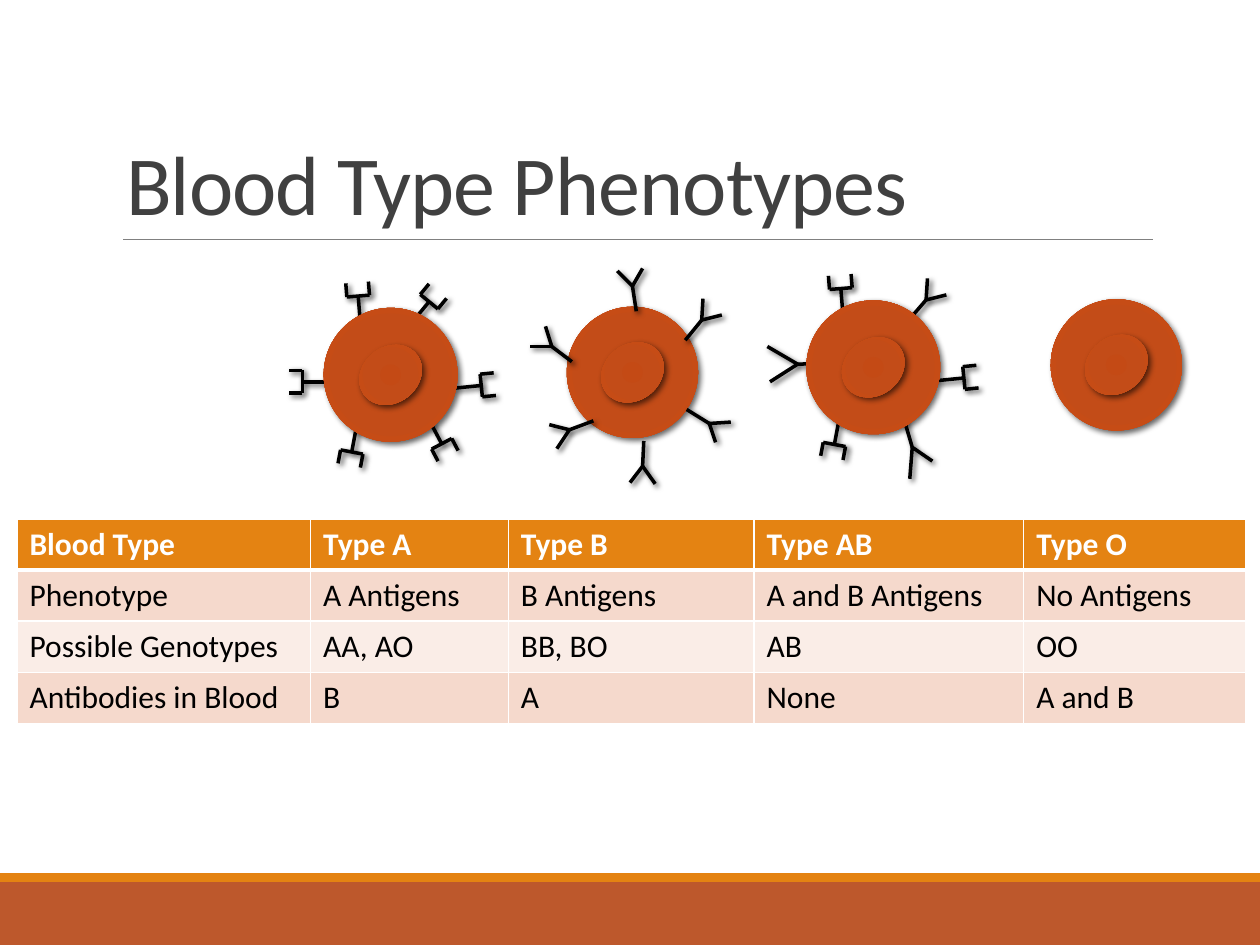
from dataclasses import dataclass
from math import hypot

from lxml.etree import SubElement
from pptx import Presentation
from pptx.dml.color import RGBColor
from pptx.enum.shapes import MSO_CONNECTOR, MSO_SHAPE
from pptx.enum.text import MSO_ANCHOR, PP_ALIGN
from pptx.oxml import parse_xml
from pptx.oxml.ns import nsdecls, qn
from pptx.util import Pt


@dataclass(frozen=True)
class Theme:
    font: str = "Calibri"
    title_size: float = 48
    table_size: float = 18
    title: str = "404040"
    rule: str = "808080"
    band: str = "BD582C"
    accent: str = "E48312"
    ink: str = "000000"
    paper: str = "FFFFFF"
    odd_row: str = "F5D9CC"
    even_row: str = "FAEDE7"
    cell_stops: tuple = ((0, "C44A15"), (34, "C34C18"), (70, "C94C15"), (100, "C45525"))


# All antigen points are offsets from the centre of the blood cell.
# An A antigen is (root, joint); its fork follows from the stem.
SHARED_A = [
    ((36.7, 7.6), (51.8, 6.1)),
    ((-19.4, 29.2), (-22.2, 44.1)),
    ((-17.3, -30), (-18.5, -45)),
]
OTHER_A = [
    ((-35.3, 4), (-50.4, 4)),
    ((22.3, 26.3), (29.2, 39.4)),
    ((12.2, -29.9), (22, -41.8)),
]
# A B antigen is (root, joint, first tip, second tip).
B_ANTIGENS = [
    ((2.2, -34.9), (0, -49.3), (-8.6, -58), (5.8, -59.4)),
    ((30.2, -18.4), (39.6, -29.9), (40.3, -42.1), (51.1, -32.8)),
    ((31, 21.2), (43.9, 29.2), (56.2, 28.4), (47.5, 40)),
    ((-34.6, -6.1), (-46.1, -14.8), (-58.3, -14.8), (-49.7, -26.3)),
    ((-22.3, 27.7), (-36, 32.8), (-43.2, 43.6), (-47.5, 29.9)),
    ((6.5, 39.2), (5.8, 53.6), (13, 63.7), (-1.4, 63)),
]
AB_B_ANTIGENS = [
    ((-18, -2.5), (-43.2, -1.8), (-59, 8.3), (-60.5, -11.9)),
    ((16.6, 26.3), (22.3, 45.7), (33.8, 53.6), (20.9, 63.7)),
    ((20.9, -27.7), (30.2, -38.5), (31, -50.8), (41.8, -41.4)),
]
# centre, diameter, antigens, antigens in front of the cell
BLOOD_CELLS = [
    ((361.4, 212.8), 75, B_ANTIGENS, True),
    ((223.2, 214.2), 76.5, SHARED_A + OTHER_A, False),
    ((499, 209.9), 76.5, SHARED_A + AB_B_ANTIGENS, False),
    ((637.9, 208.5), 75, [], False),
]
BLOOD_TYPES = [
    ["Blood Type", "Type A", "Type B", "Type AB", "Type O"],
    ["Phenotype", "A Antigens", "B Antigens", "A and B Antigens", "No Antigens"],
    ["Possible Genotypes", "AA, AO", "BB, BO", "AB", "OO"],
    ["Antibodies in Blood", "B", "A", "None", "A and B"],
]
COLUMN_WIDTHS = [167.8, 113, 140.4, 154.1, 126.7]


def antigen_lines(root, joint, *tips):
    """Return the strokes of a Y, or of a square fork if no tips are given."""
    if tips:
        return [(root, joint)] + [(joint, tip) for tip in tips]
    (x, y) = joint
    length = hypot(x - root[0], y - root[1])
    across, down = (x - root[0]) / length, (y - root[1]) / length
    half_bar, tine = 6.5, 7.8
    corners = [(x - side * half_bar * down, y + side * half_bar * across) for side in (-1, 1)]
    tines = [((cx, cy), (cx + tine * across, cy + tine * down)) for cx, cy in corners]
    return [(root, joint), tuple(corners)] + tines


class SlideBuilder:
    def __init__(self, page, theme):
        self.page = page
        self.theme = theme

    def style(self, span, **formats):
        color = formats.pop("color")
        for name, value in {"name": self.theme.font, **formats}.items():
            setattr(span.font, name, value)
        span.font.color.rgb = RGBColor.from_string(color)

    def shadow(self, shape, blur):
        properties = shape._element.spPr
        effects = SubElement(properties, qn("a:effectLst"))
        if blur:
            outer = SubElement(effects, qn("a:outerShdw"), blurRad=str(Pt(blur)),
                               dist=str(Pt(2)), dir="2700000", algn="tl", rotWithShape="0")
            color = SubElement(outer, qn("a:srgbClr"), val=self.theme.ink)
            SubElement(color, qn("a:alpha"), val="60000")

    def title(self, text, left, top, width, height):
        box = self.page.shapes.title
        place = dict(left=left, top=top, width=width, height=height)
        for name, value in place.items():
            setattr(box, name, Pt(value))
        box.text_frame.vertical_anchor = MSO_ANCHOR.BOTTOM
        para = box.text_frame.paragraphs[0]
        para.alignment = PP_ALIGN.LEFT
        para.line_spacing = 0.85
        span = para.add_run()
        span.text = text
        self.style(span, size=Pt(self.theme.title_size), color=self.theme.title)
        span.font._element.set("spc", "-50")

    def bar(self, top, height, color):
        bar = self.page.shapes.add_shape(MSO_SHAPE.RECTANGLE, 0, Pt(top), Pt(720), Pt(height))
        bar.shadow.inherit = False
        bar.fill.solid()
        bar.fill.fore_color.rgb = RGBColor.from_string(color)
        bar.line.fill.background()

    def line(self, shapes, start, end, color, width, blur=0):
        points = [Pt(value) for value in (*start, *end)]
        line = shapes.add_connector(MSO_CONNECTOR.STRAIGHT, *points)
        line.line.color.rgb = RGBColor.from_string(color)
        line.line.width = Pt(width)
        self.shadow(line, blur)

    def disc(self, shapes, center, width, height, rotation):
        left, top = center[0] - width / 2, center[1] - height / 2
        disc = shapes.add_shape(MSO_SHAPE.OVAL, Pt(left), Pt(top), Pt(width), Pt(height))
        disc.rotation = rotation
        stops = "".join(f'<a:gs pos="{position * 1000}"><a:srgbClr val="{color}"/></a:gs>'
                        for position, color in self.theme.cell_stops)
        disc._element.spPr.insert(2, parse_xml(
            f'<a:gradFill {nsdecls("a")} rotWithShape="1"><a:gsLst>{stops}</a:gsLst>'
            '<a:path path="circle"><a:fillToRect l="100000" t="100000" r="100000" b="100000"/>'
            '</a:path></a:gradFill>'))
        disc.line.fill.background()
        self.shadow(disc, 3.5)

    def blood_cell(self, center, diameter, antigens, in_front):
        shapes = self.page.shapes.add_group_shape().shapes

        def draw_body():
            self.disc(shapes, center, diameter, diameter, 40.4)
            self.disc(shapes, center, 32, 38, 51.5)

        if in_front:
            draw_body()
        for antigen in antigens:
            for stroke in antigen_lines(*antigen):
                start, end = [(center[0] + x, center[1] + y) for x, y in stroke]
                self.line(shapes, start, end, self.theme.ink, 2, blur=3)
        if not in_front:
            draw_body()

    def cell_borders(self, cell, top, bottom):
        properties = cell._tc.get_or_add_tcPr()
        for index, (side, width) in enumerate(dict(L=1, R=1, T=top, B=bottom).items()):
            properties.insert(index, parse_xml(
                f'<a:ln{side} {nsdecls("a")} w="{Pt(width)}"><a:solidFill>'
                f'<a:srgbClr val="{self.theme.paper}"/></a:solidFill></a:ln{side}>'))

    def table(self, rows, widths, left, top, row_height):
        theme = self.theme
        table = self.page.shapes.add_table(
            len(rows), len(widths), Pt(left), Pt(top),
            Pt(sum(widths)), Pt(row_height * len(rows))).table
        table.horz_banding = False
        for column, width in zip(table.columns, widths):
            column.width = Pt(width)
        for r, texts in enumerate(rows):
            header = r == 0
            fill = theme.accent if header else (theme.even_row, theme.odd_row)[r % 2]
            for c, text in enumerate(texts):
                cell = table.cell(r, c)
                cell.fill.solid()
                cell.fill.fore_color.rgb = RGBColor.from_string(fill)
                self.cell_borders(cell, top=3 if r == 1 else 1, bottom=3 if header else 1)
                span = cell.text_frame.paragraphs[0].add_run()
                span.text = text
                self.style(span, size=Pt(theme.table_size), bold=header,
                           color=theme.paper if header else theme.ink)


def main():
    deck = Presentation()
    deck.slide_width, deck.slide_height = Pt(720), Pt(540)
    theme = Theme()
    builder = SlideBuilder(deck.slides.add_slide(deck.slide_layouts[5]), theme)
    builder.bar(504, 36, theme.band)
    builder.bar(499, 5, theme.accent)
    builder.line(builder.page.shapes, (70.5, 136.8), (658.8, 136.8), theme.rule, 0.5)
    builder.title("Blood Type Phenotypes", 64.8, 22.3, 594, 114.5)
    for blood_cell in BLOOD_CELLS:
        builder.blood_cell(*blood_cell)
    builder.table(BLOOD_TYPES, COLUMN_WIDTHS, left=9.7, top=296.6, row_height=29.2)
    deck.save("out.pptx")


if __name__ == "__main__":
    main()
